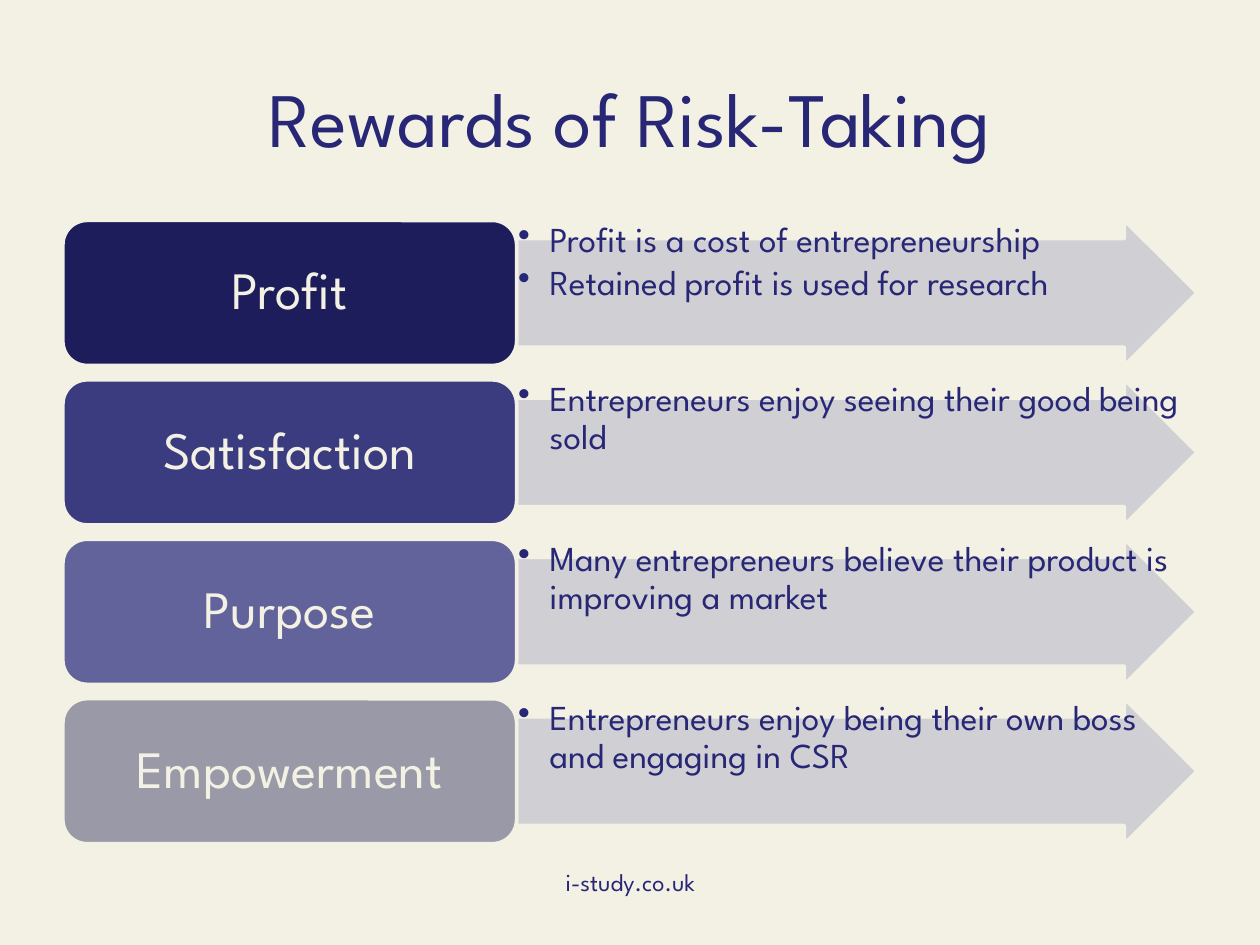
from typing import NamedTuple

from lxml import etree
from pptx import Presentation
from pptx.dml.color import RGBColor
from pptx.enum.shapes import MSO_SHAPE
from pptx.enum.text import MSO_ANCHOR, PP_ALIGN
from pptx.oxml.ns import qn
from pptx.util import Pt

ARROW = MSO_SHAPE.RIGHT_ARROW
ROUND = MSO_SHAPE.ROUNDED_RECTANGLE
TOP = MSO_ANCHOR.TOP
MIDDLE = MSO_ANCHOR.MIDDLE
LEFT = PP_ALIGN.LEFT
CENTER = PP_ALIGN.CENTER

FONT = "League Spartan"
CREAM = "F3F1E4"
NAVY = "272776"
GREY = "CDCDD3"


class Box(NamedTuple):
    left: float
    top: float
    width: float
    height: float


class Reward(NamedTuple):
    name: str
    fill: str
    points: list[str]


REWARDS = [
    Reward("Profit", "1D1D5B", [
        "Profit is a cost of entrepreneurship",
        "Retained profit is used for research",
    ]),
    Reward("Satisfaction", "3B3B80", [
        "Entrepreneurs enjoy seeing their good being sold",
    ]),
    Reward("Purpose", "63639B", [
        "Many entrepreneurs believe their product is improving a market",
    ]),
    Reward("Empowerment", "9999A7", [
        "Entrepreneurs enjoy being their own boss and engaging in CSR",
    ]),
]


def paint(color, code: str) -> None:
    color.rgb = RGBColor.from_string(code)


def write(frame, lines: list[str], *, size: float, color: str = NAVY,
          align=CENTER, anchor=MIDDLE, pad: tuple[float, float] = (7.2, 3.6),
          pitch: float = 1.0, after: float = 0, bullet: bool = False) -> None:
    frame.word_wrap = True
    frame.vertical_anchor = anchor
    frame.margin_left = frame.margin_right = Pt(pad[0])
    frame.margin_top = frame.margin_bottom = Pt(pad[1])
    for index, line in enumerate(lines):
        para = frame.add_paragraph() if index else frame.paragraphs[0]
        para.alignment = align
        para.line_spacing = pitch
        para.space_after = Pt(after)
        if bullet:
            para.level = 1
            props = para._p.get_or_add_pPr()
            props.set("marL", str(Pt(18)))
            props.set("indent", str(-Pt(18)))
            etree.SubElement(props, qn("a:buChar"), char="•")
        run = para.add_run()
        run.text = line
        run.font.name = FONT
        run.font.size = Pt(size)
        paint(run.font.color, color)


def add_text(slide, box: Box, lines: list[str], **style) -> None:
    label = slide.shapes.add_textbox(*map(Pt, box))
    write(label.text_frame, lines, **style)


def add_block(slide, kind, box: Box, fill: str):
    shape = slide.shapes.add_shape(kind, *map(Pt, box))
    shape.shadow.inherit = False
    shape.fill.solid()
    paint(shape.fill.fore_color, fill)
    paint(shape.line.color, CREAM)
    shape.line.width = Pt(2)
    return shape


def fade(shape, percent: int) -> None:
    color = shape.fill._xPr.find(qn("a:solidFill"))[0]
    etree.SubElement(color, qn("a:alpha"), val=str(percent * 1000))


def add_row(slide, top: float, reward: Reward) -> None:
    body = Box(295.2, top, 388.8, 82.8)
    arrow = add_block(slide, ARROW, body, GREY)
    arrow.adjustments[0] = 0.75
    arrow.adjustments[1] = 0.5
    fade(arrow, 90)
    add_text(slide, body, reward.points, size=20, align=LEFT, anchor=TOP,
             pad=(0.9, 0.9), pitch=0.9, after=3, bullet=True)
    label = add_block(slide, ROUND, Box(36, top, 259.2, 82.8), reward.fill)
    write(label.text_frame, [reward.name], size=30, color=CREAM,
          pad=(9, 4.5), pitch=0.9)


def main() -> None:
    deck = Presentation()
    deck.slide_width, deck.slide_height = Pt(720), Pt(540)
    slide = deck.slides.add_slide(deck.slide_layouts[6])
    slide.background.fill.solid()
    paint(slide.background.fill.fore_color, CREAM)
    add_text(slide, Box(36, 21.6, 648, 90), ["Rewards of Risk-Taking"], size=44)
    add_text(slide, Box(246.2, 491.8, 228, 37.4), ["i-study.co.uk"],
             size=14, anchor=TOP)
    for index, reward in enumerate(REWARDS):
        add_row(slide, 126 + index * 91.1, reward)
    deck.save("out.pptx")


if __name__ == "__main__":
    main()
